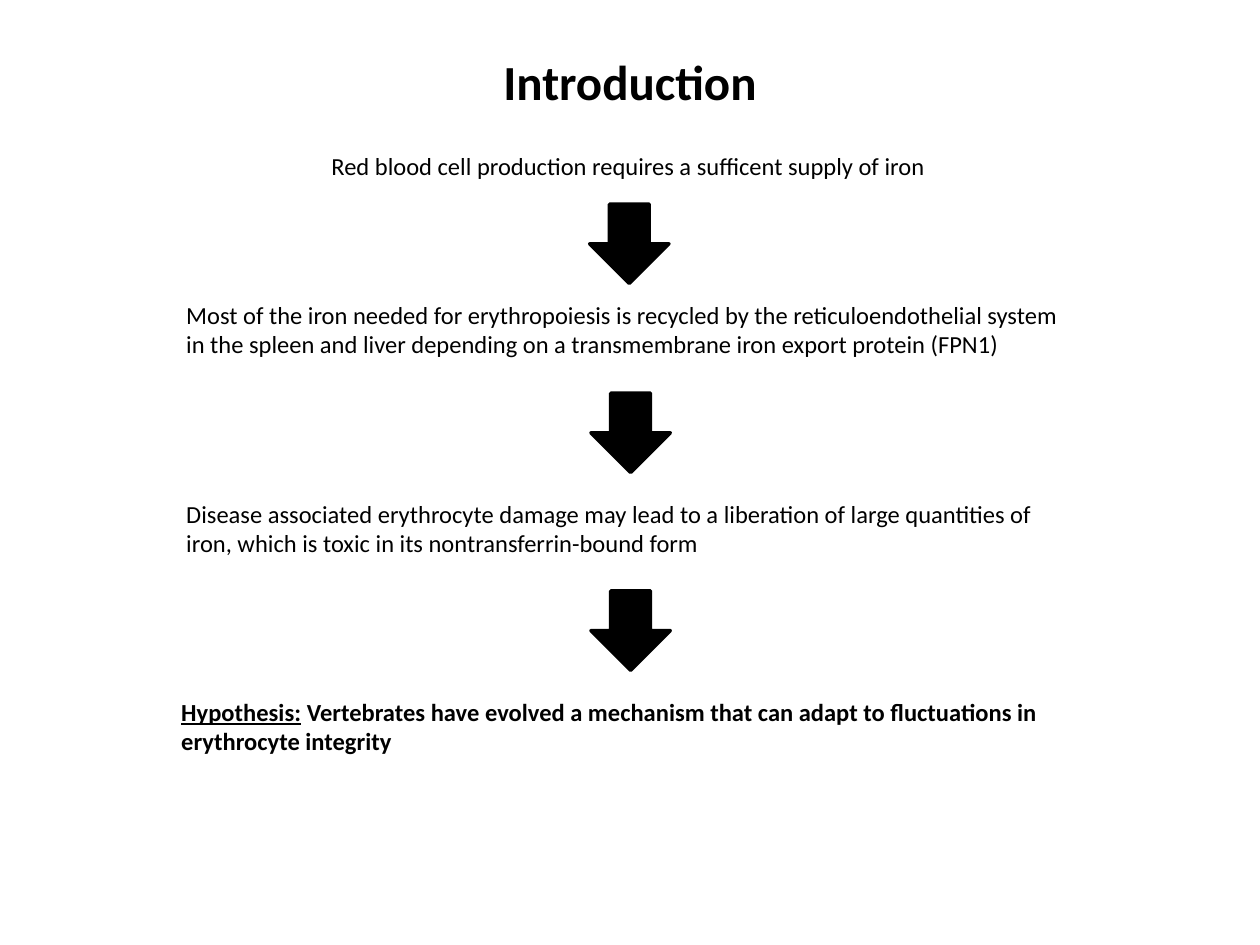
from lxml import etree
from pptx import Presentation
from pptx import util as u
from pptx.dml.color import RGBColor
from pptx.enum import shapes, text
from pptx.oxml.ns import qn

BLACK = "000000"
FONT = "Calibri"
ARROW_SIZE = 0.63

STATEMENTS = [
    (2.33, "Most of the iron needed for erythropoiesis is recycled by the "
           "reticuloendothelial system in the spleen and liver depending on "
           "a transmembrane iron export protein (FPN1)"),
    (3.91, "Disease associated erythrocyte damage may lead to a liberation of "
           "large quantities of iron, which is toxic in its "
           "nontransferrin-bound form"),
]
ARROWS = [(4.68, 1.62), (4.69, 3.12), (4.69, 4.69)]


def color(hex_string):
    return RGBColor.from_string(hex_string)


def place(shape, left, top, width, height):
    shape.left, shape.top = u.Inches(left), u.Inches(top)
    shape.width, shape.height = u.Inches(width), u.Inches(height)


def add_text(paragraph, content, size=14, bold=False, underline=False):
    run = paragraph.add_run()
    run.text = content
    font = run.font
    font.name, font.size = FONT, u.Pt(size)
    font.bold, font.underline = bold, underline
    font.color.rgb = color(BLACK)


def prepare_frame(shape, anchor=text.MSO_ANCHOR.TOP):
    """Wrap and anchor the text, and return its first paragraph."""
    frame = shape.text_frame
    frame.word_wrap = True
    frame.auto_size = text.MSO_AUTO_SIZE.NONE
    frame.vertical_anchor = anchor
    return frame.paragraphs[0]


def remove_bullet(paragraph):
    properties = paragraph._p.get_or_add_pPr()
    properties.set("marL", "0")
    properties.set("indent", "0")
    etree.SubElement(properties, qn("a:buNone"))


def fill_title(slide):
    title = slide.shapes.title
    place(title, 0.5, 0.3, 9, 0.69)
    paragraph = prepare_frame(title, text.MSO_ANCHOR.MIDDLE)
    paragraph.alignment = text.PP_ALIGN.CENTER
    add_text(paragraph, "Introduction", size=28, bold=True)


def fill_premise(slide):
    body = slide.placeholders[1]
    place(body, 2.53, 1.15, 4.96, 0.58)
    paragraph = prepare_frame(body)
    paragraph.space_before = u.Pt(0)
    remove_bullet(paragraph)
    add_text(paragraph,
             "Red blood cell production requires a sufficent supply of iron")


def add_statement_box(slide, left, top):
    box = slide.shapes.add_textbox(u.Inches(left), u.Inches(top),
                                   u.Inches(7.24), u.Inches(0.63))
    return prepare_frame(box)


def add_down_arrow(slide, left, top):
    arrow = slide.shapes.add_shape(
        shapes.MSO_SHAPE.DOWN_ARROW, u.Inches(left), u.Inches(top),
        u.Inches(ARROW_SIZE), u.Inches(ARROW_SIZE))
    arrow.shadow.inherit = False
    arrow.fill.solid()
    arrow.fill.fore_color.rgb = color(BLACK)
    arrow.line.color.rgb = color(BLACK)
    arrow.line.width = u.Pt(2)


def main():
    presentation = Presentation()
    presentation.slide_width = u.Inches(10)
    presentation.slide_height = u.Inches(7.5)
    slide = presentation.slides.add_slide(presentation.slide_layouts[1])

    fill_title(slide)
    fill_premise(slide)
    for top, statement in STATEMENTS:
        add_text(add_statement_box(slide, 1.38, top), statement)

    hypothesis = add_statement_box(slide, 1.34, 5.48)
    add_text(hypothesis, "Hypothesis:", bold=True, underline=True)
    add_text(hypothesis, " ")
    add_text(hypothesis, "Vertebrates have evolved a mechanism that can adapt "
                         "to fluctuations in erythrocyte integrity", bold=True)

    for left, top in ARROWS:
        add_down_arrow(slide, left, top)
    presentation.save("out.pptx")


if __name__ == "__main__":
    main()
